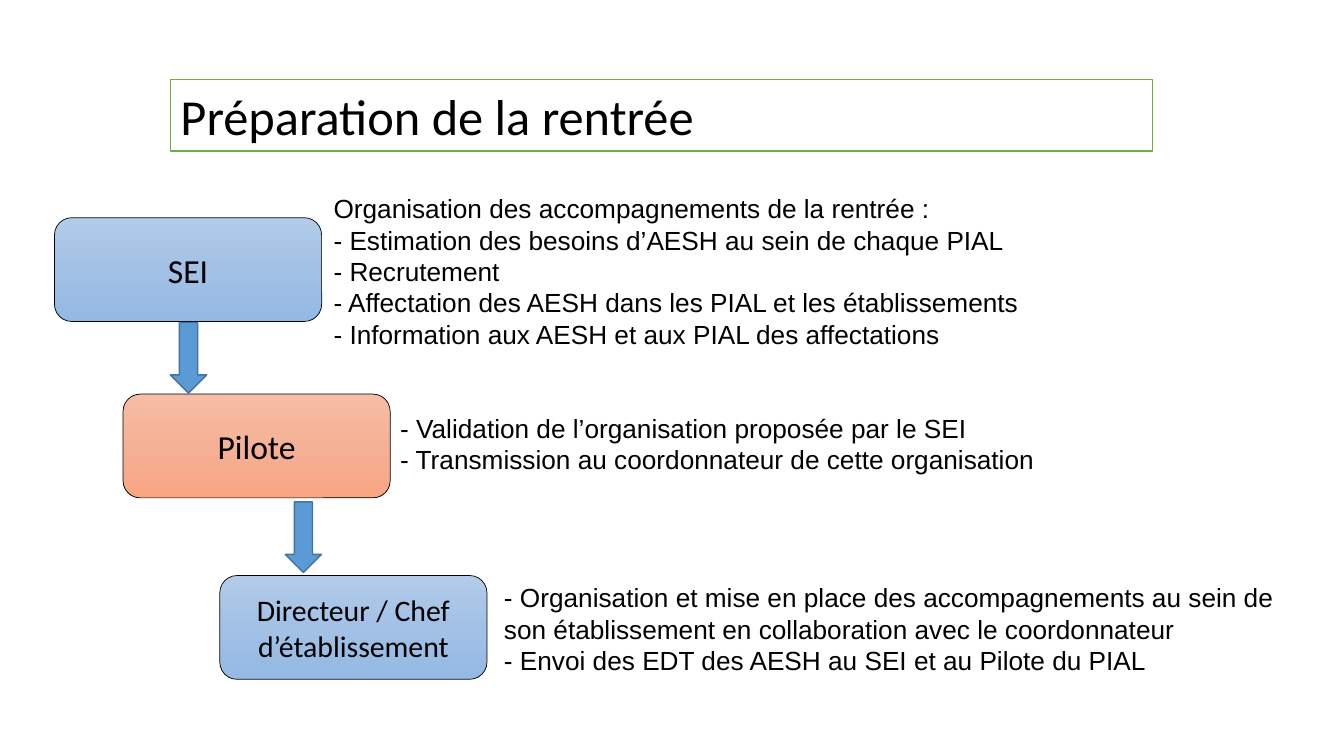
from copy import deepcopy

from pptx import Presentation
from pptx.dml.color import RGBColor
from pptx.enum.shapes import MSO_SHAPE
from pptx.enum.text import MSO_ANCHOR, MSO_AUTO_SIZE, PP_ALIGN
from pptx.oxml.ns import qn
from pptx.util import Inches, Pt

BLACK = RGBColor(0x00, 0x00, 0x00)
WHITE = RGBColor(0xFF, 0xFF, 0xFF)
GREEN = RGBColor(0x70, 0xAD, 0x47)
ARROW_FILL = RGBColor(0x5B, 0x9B, 0xD5)
ARROW_LINE = RGBColor(0x43, 0x73, 0x9E)
BLUES = (RGBColor(0xB1, 0xCB, 0xE9), RGBColor(0xA3, 0xC1, 0xE5), RGBColor(0x93, 0xB9, 0xE4))
ORANGES = (RGBColor(0xF7, 0xBD, 0xA5), RGBColor(0xF5, 0xB1, 0x96), RGBColor(0xF8, 0xA5, 0x82))

# Each step: role, text size, box left and top, gradient, tasks, tasks' left, top, width, height
STEPS = [
    ("SEI", 24, (0.54, 2.16), BLUES,
     ["Organisation des accompagnements de la rentrée :",
      "- Estimation des besoins d’AESH au sein de chaque PIAL",
      "- Recrutement",
      "- Affectation des AESH dans les PIAL et les établissements",
      "- Information aux AESH et aux PIAL des affectations"],
     (3.21, 1.86, 9.74, 1.67)),
    ("Pilote", 24, (1.22, 3.91), ORANGES,
     ["- Validation de l’organisation proposée par le SEI",
      "- Transmission au coordonnateur de cette organisation"],
     (3.87, 4.04, 7.79, 0.73)),
    ("Directeur / Chef d’établissement", 21.3, (2.18, 5.71), BLUES,
     ["- Organisation et mise en place des accompagnements au sein de "
      "son établissement en collaboration avec le coordonnateur",
      "- Envoi des EDT des AESH au SEI et au Pilote du PIAL"],
     (4.9, 5.72, 8.05, 1.04)),
]
ARROWS = [(1.69, 3.2), (2.83, 4.98)]


class StepSlide:
    heading_font = "Calibri"
    body_font = "Arial"
    body_size = 18.7
    box_size = (2.65, 1.03)
    arrow_size = (0.36, 0.7)

    def __init__(self, prs):
        self.s = prs.slides.add_slide(prs.slide_layouts[5])

    def set_text(self, tf, lines, font, size, align, anchor):
        tf.word_wrap = True
        tf.vertical_anchor = anchor
        for i, line in enumerate(lines):
            p = tf.add_paragraph() if i else tf.paragraphs[0]
            p.text = line
            p.alignment = align
            p.font.name = font
            p.font.size = Pt(size)
            p.font.color.rgb = BLACK

    def outline(self, sp, color, width):
        sp.line.color.rgb = color
        sp.line.width = Pt(width)

    def title(self, text, left, top, width, height):
        sp = self.s.shapes.title
        sp.left, sp.top, sp.width, sp.height = map(Inches, (left, top, width, height))
        sp.fill.solid()
        sp.fill.fore_color.rgb = WHITE
        self.outline(sp, GREEN, 1)
        self.set_text(sp.text_frame, [text], self.heading_font, 36, PP_ALIGN.LEFT, MSO_ANCHOR.MIDDLE)
        sp.text_frame.auto_size = MSO_AUTO_SIZE.NONE

    def shape(self, kind, left, top, size):
        sp = self.s.shapes.add_shape(kind, *map(Inches, (left, top, *size)))
        sp.shadow.inherit = False
        return sp

    def gradient(self, sp, colors):
        """Fill from top to bottom with three evenly spaced colours."""
        sp.fill.gradient()
        sp.fill.gradient_angle = 270
        stops = sp._element.spPr.find(qn("a:gradFill")).find(qn("a:gsLst"))
        stops.insert(1, deepcopy(stops[0]))
        for i, (stop, color) in enumerate(zip(sp.fill.gradient_stops, colors)):
            stop.position = i / 2
            stop.color.rgb = color

    def role(self, text, size, left, top, colors):
        sp = self.shape(MSO_SHAPE.ROUNDED_RECTANGLE, left, top, self.box_size)
        self.gradient(sp, colors)
        self.outline(sp, BLACK, 0.5)
        self.set_text(sp.text_frame, [text], self.heading_font, size, PP_ALIGN.CENTER, MSO_ANCHOR.MIDDLE)

    def tasks(self, lines, left, top, width, height):
        tf = self.s.shapes.add_textbox(*map(Inches, (left, top, width, height))).text_frame
        self.set_text(tf, lines, self.body_font, self.body_size, PP_ALIGN.LEFT, MSO_ANCHOR.TOP)

    def arrow(self, left, top):
        sp = self.shape(MSO_SHAPE.DOWN_ARROW, left, top, self.arrow_size)
        sp.fill.solid()
        sp.fill.fore_color.rgb = ARROW_FILL
        self.outline(sp, ARROW_LINE, 1)


def main():
    prs = Presentation()
    prs.slide_width, prs.slide_height = Inches(13.33), Inches(7.5)
    slide = StepSlide(prs)
    slide.title("Préparation de la rentrée", 1.69, 0.79, 9.74, 0.71)
    for name, size, corner, colors, lines, area in STEPS:
        slide.role(name, size, *corner, colors)
        slide.tasks(lines, *area)
    for corner in ARROWS:
        slide.arrow(*corner)
    prs.save("out.pptx")


if __name__ == "__main__":
    main()
